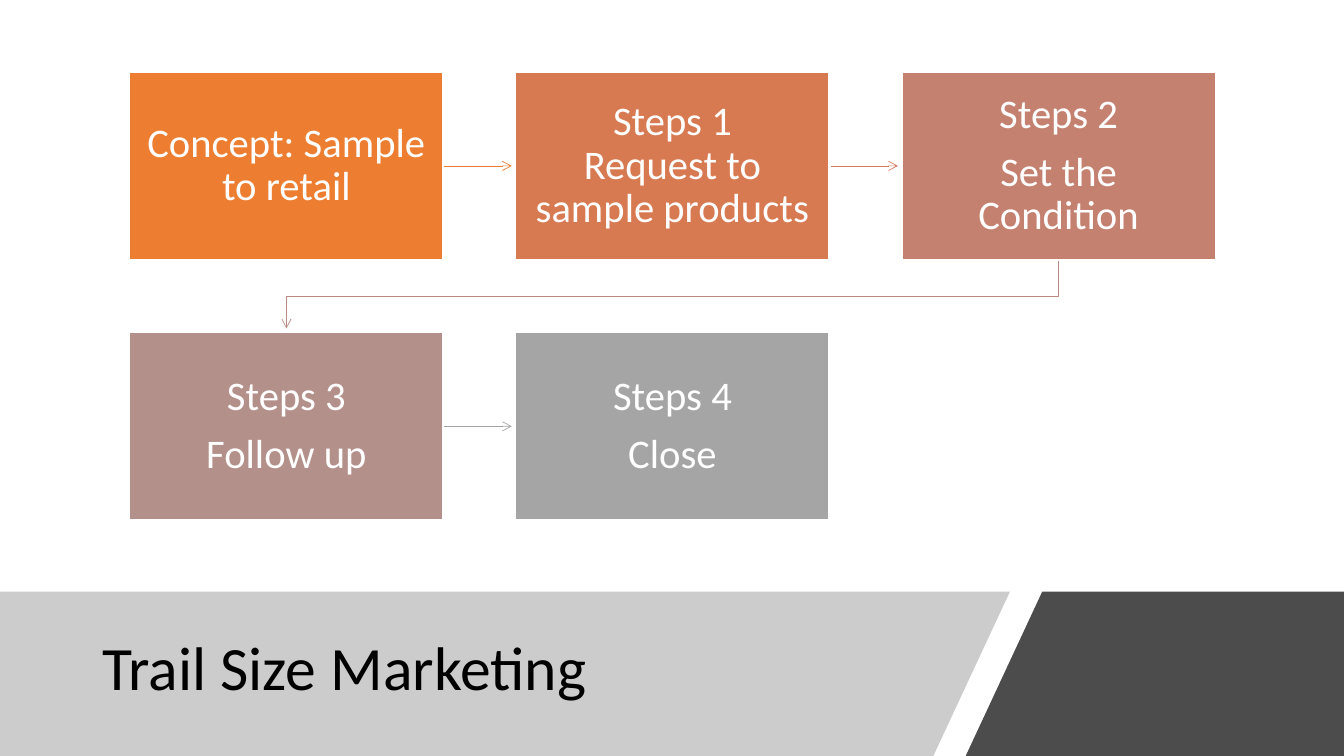
"""Build the Trail Size Marketing process slide."""
from dataclasses import dataclass

from lxml.etree import SubElement
from pptx import Presentation
from pptx.dml.color import RGBColor
from pptx.enum.shapes import MSO_CONNECTOR, MSO_SHAPE
from pptx.enum.text import MSO_ANCHOR, PP_ALIGN
from pptx.oxml.ns import qn
from pptx.util import Pt

TITLE = "Trail Size Marketing"
STEPS = [
    (["Concept: Sample to retail"], "ED7D31"),
    (["Steps 1\vRequest to sample products"], "D87A51"),
    (["Steps 2", "Set the Condition"], "C48170"),
    (["Steps 3", "Follow up"], "B4908B"),
    (["Steps 4", "Close"], "A5A5A5"),
]
ARROW_COLORS = ["ED7D31", "D17B5C", "B98A82", "A5A5A5"]
BAND_TOP, PAGE_WIDTH, PAGE_HEIGHT = 422.6, 960, 540
PANELS = [
    ([(0, BAND_TOP), (721.4, BAND_TOP), (666.7, PAGE_HEIGHT), (0, PAGE_HEIGHT)], "808080", 40),
    ([(744.5, BAND_TOP), (PAGE_WIDTH, BAND_TOP), (PAGE_WIDTH, PAGE_HEIGHT), (689.8, PAGE_HEIGHT)],
     "000000", 70),
]
COLUMNS = 3
LEFT, TOP = 92.4, 51.2
BOX_WIDTH, BOX_HEIGHT = 224.4, 134.6
COLUMN_PITCH, ROW_PITCH = 275.8, 186
ARROW_CLEARANCE = 2.6


@dataclass(frozen=True)
class Theme:
    """Colours and type sizes of the slide."""
    font: str = "Calibri"
    title_size: int = 44
    step_size: int = 29
    title_color: str = "000000"
    step_color: str = "FFFFFF"
    border: str = "FFFFFF"


THEME = Theme()


def rgb(value):
    """Turn a hex string into a colour."""
    return RGBColor.from_string(value)


def set_font(paragraph, size, color):
    """Apply the common type settings to a paragraph."""
    paragraph.line_spacing = 0.9
    paragraph.font.name = THEME.font
    paragraph.font.size = Pt(size)
    paragraph.font.color.rgb = rgb(color)


def add_outline(page, points, close=True):
    """Add a freeform through the points."""
    corners = [(Pt(x), Pt(y)) for x, y in points]
    builder = page.shapes.build_freeform(*corners[0], scale=1.0)
    builder.add_line_segments(corners[1:], close=close)
    shape = builder.convert_to_shape()
    shape.shadow.inherit = False
    return shape


def add_panel(page, points, color, opacity):
    """Add a translucent panel of the bottom band."""
    panel = add_outline(page, points)
    panel.fill.solid()
    panel.fill.fore_color.rgb = rgb(color)
    panel.line.fill.background()
    fill_color = panel.fill._xPr.find(qn("a:solidFill"))[0]
    SubElement(fill_color, qn("a:alpha"), val=str(opacity * 1000))


def add_title(page):
    """Fill and place the title above the band."""
    title = page.shapes.title
    page.shapes._spTree.append(title._element)
    title.left, title.top, title.width, title.height = Pt(66), Pt(435.6), Pt(608), Pt(86.4)
    title.text_frame.text = TITLE
    title.text_frame.vertical_anchor = MSO_ANCHOR.MIDDLE
    paragraph = title.text_frame.paragraphs[0]
    paragraph.alignment = PP_ALIGN.LEFT
    set_font(paragraph, THEME.title_size, THEME.title_color)


def box_corner(index):
    """Return the left and top of a step box."""
    row, column = divmod(index, COLUMNS)
    return LEFT + column * COLUMN_PITCH, TOP + row * ROW_PITCH


def add_arrow(page, index, color):
    """Link a step to the next one."""
    left, top = box_corner(index)
    next_left, next_top = box_corner(index + 1)
    if top == next_top:
        middle = Pt(top + BOX_HEIGHT / 2)
        arrow = page.shapes.add_connector(
            MSO_CONNECTOR.STRAIGHT, Pt(left + BOX_WIDTH), middle,
            Pt(next_left - ARROW_CLEARANCE), middle)
        SubElement(arrow._element.spPr, qn("a:effectLst"))
    else:
        start, end = left + BOX_WIDTH / 2, next_left + BOX_WIDTH / 2
        bottom = top + BOX_HEIGHT
        turn = (bottom + next_top) / 2
        arrow = add_outline(page, [(start, bottom), (start, turn), (end, turn),
                                   (end, next_top - ARROW_CLEARANCE)], close=False)
        arrow.fill.background()
    arrow.line.color.rgb = rgb(color)
    arrow.line.width = Pt(0.5)
    SubElement(arrow.line._get_or_add_ln(), qn("a:tailEnd"), type="arrow")


def add_step(page, index, lines, color):
    """Add a step box with its text."""
    left, top = box_corner(index)
    box = page.shapes.add_shape(
        MSO_SHAPE.RECTANGLE, Pt(left), Pt(top), Pt(BOX_WIDTH), Pt(BOX_HEIGHT))
    box.shadow.inherit = False
    box.fill.solid()
    box.fill.fore_color.rgb = rgb(color)
    box.line.color.rgb = rgb(THEME.border)
    box.line.width = Pt(1.5)
    frame = box.text_frame
    frame.word_wrap = True
    frame.vertical_anchor = MSO_ANCHOR.MIDDLE
    frame.margin_left = frame.margin_right = Pt(11)
    frame.margin_top = frame.margin_bottom = Pt(11.5)
    frame.text = "\n".join(lines)
    for position, paragraph in enumerate(frame.paragraphs):
        paragraph.alignment = PP_ALIGN.CENTER
        if position:
            paragraph.space_before = Pt(10)
        set_font(paragraph, THEME.step_size, THEME.step_color)


def main():
    """Build and save the deck."""
    deck = Presentation()
    deck.slide_width, deck.slide_height = Pt(PAGE_WIDTH), Pt(PAGE_HEIGHT)
    page = deck.slides.add_slide(deck.slide_layouts[5])
    for panel in PANELS:
        add_panel(page, *panel)
    add_title(page)
    for index, color in enumerate(ARROW_COLORS):
        add_arrow(page, index, color)
    for index, (lines, color) in enumerate(STEPS):
        add_step(page, index, lines, color)
    deck.save("out.pptx")


if __name__ == "__main__":
    main()
